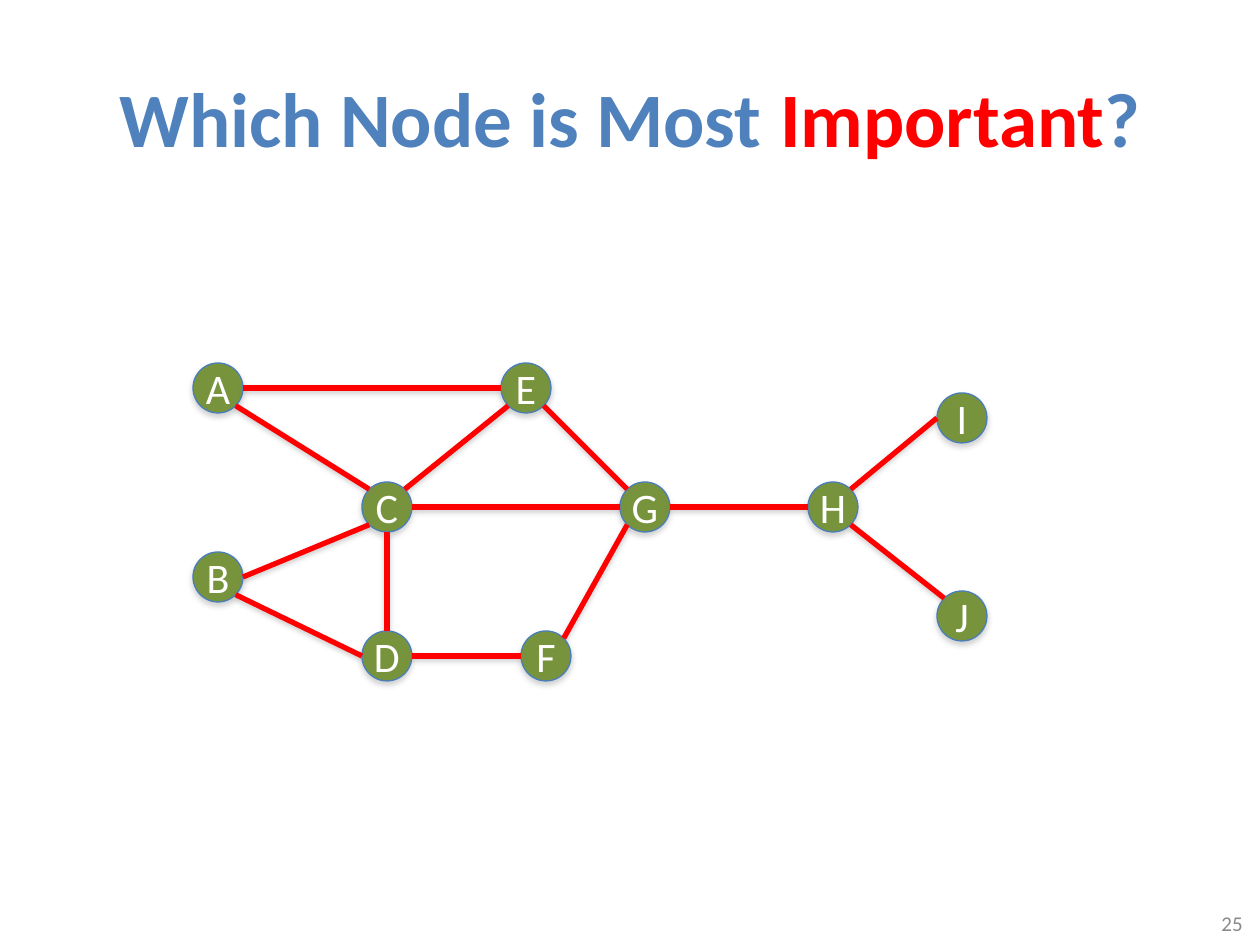
from lxml import etree
from pptx import Presentation
from pptx.dml.color import RGBColor
from pptx.enum.shapes import MSO_CONNECTOR, MSO_SHAPE
from pptx.enum.text import MSO_ANCHOR, PP_ALIGN
from pptx.oxml.ns import qn
from pptx.util import Emu, Pt

LINE, OVAL = MSO_CONNECTOR.STRAIGHT, MSO_SHAPE.OVAL
MIDDLE = MSO_ANCHOR.MIDDLE
CENTER, RIGHT = PP_ALIGN.CENTER, PP_ALIGN.RIGHT
TITLE_ONLY = 5
SCALE = 914400 / 126
FONT = "Calibri"
RED, BLUE, WHITE = "FF0000", "4F81BD", "FFFFFF"
RADIUS = 25
DIAGONAL = 0.71
SITES = {
    "n": (0, -1), "s": (0, 1), "e": (1, 0), "w": (-1, 0),
    "ne": (DIAGONAL, -DIAGONAL), "nw": (-DIAGONAL, -DIAGONAL),
    "se": (DIAGONAL, DIAGONAL), "sw": (-DIAGONAL, DIAGONAL),
}
NODES = {
    "A": (25, 25), "B": (25, 214), "D": (194, 293), "C": (194, 144),
    "E": (333, 25), "F": (353, 293), "G": (452, 144), "H": (640, 144),
    "I": (769, 55), "J": (769, 253),
}
EDGES = [
    ("C", "e", "G", "w"), ("C", "ne", "E", "sw"), ("C", "nw", "A", "se"),
    ("C", "sw", "B", "e"), ("D", "w", "B", "se"), ("D", "n", "C", "s"),
    ("D", "e", "F", "w"), ("F", "ne", "G", "sw"), ("G", "nw", "E", "se"),
    ("A", "e", "E", "w"), ("G", "e", "H", "w"), ("H", "ne", "I", "w"),
    ("H", "se", "J", "nw"),
]


def px(length):
    """Turn pixels into EMU."""
    return Emu(round(length * SCALE))


def color(value):
    """Turn a hex string into a colour."""
    return RGBColor.from_string(value)


def add_span(para, text, size, hue, bold=False):
    """Add one formatted run to a paragraph."""
    span = para.add_run()
    span.text = text
    span.font.name, span.font.size, span.font.bold = FONT, Pt(size), bold
    span.font.color.rgb = color(hue)


def add_shadow(shape, opacity, distance):
    """Give a shape or connector a soft grey shadow straight below it."""
    effects = etree.SubElement(shape.element.spPr, qn("a:effectLst"))
    shadow = etree.SubElement(
        effects, qn("a:outerShdw"), blurRad=str(Pt(3.1)), dist=str(Pt(distance)),
        dir="5400000", rotWithShape="0")
    tint = etree.SubElement(shadow, qn("a:srgbClr"), val="808080")
    etree.SubElement(tint, qn("a:alpha"), val=str(opacity * 1000))


def add_title(page, left, top, width, height):
    """Place and fill the title placeholder."""
    title = page.shapes.title
    title.left, title.top, title.width, title.height = map(px, (left, top, width, height))
    title.text_frame.vertical_anchor = MIDDLE
    para = title.text_frame.paragraphs[0]
    para.alignment = CENTER
    for text, hue in (("Which Node is Most ", BLUE), ("Important", RED), ("?", BLUE)):
        add_span(para, text, 44, hue, True)


def add_page_number(page, left, top, width, height):
    """Write the page number in the corner."""
    frame = page.shapes.add_textbox(*map(px, (left, top, width, height))).text_frame
    frame.word_wrap = True
    frame.vertical_anchor = MIDDLE
    para = frame.paragraphs[0]
    para.alignment = RIGHT
    add_span(para, "25", 12, "898989")


def add_node(page, name, x, y):
    """Draw a labelled round node centred on a point."""
    node = page.shapes.add_shape(
        OVAL, px(x - RADIUS), px(y - RADIUS), px(2 * RADIUS), px(2 * RADIUS))
    node.fill.solid()
    node.fill.fore_color.rgb = color("77933C")
    node.line.color.rgb = color("4A7EBB")
    node.line.width = Pt(0.75)
    add_shadow(node, 35, 1.8)
    frame = node.text_frame
    frame.margin_left = frame.margin_right = frame.margin_top = frame.margin_bottom = 0
    frame.vertical_anchor = MIDDLE
    frame.word_wrap = True
    para = frame.paragraphs[0]
    para.alignment = CENTER
    add_span(para, name, 24, WHITE)


def add_edge(page, start, end):
    """Draw a red edge between two points."""
    edge = page.shapes.add_connector(LINE, *map(px, start + end))
    edge.line.color.rgb = color(RED)
    edge.line.width = Pt(3)
    add_shadow(edge, 38, 1.6)


def add_graph(page, left, top):
    """Draw the nodes and the edges that join their rims."""
    centers = {name: (left + x, top + y) for name, (x, y) in NODES.items()}

    def rim(name, site):
        """Find the point of a node's rim in a compass direction."""
        return tuple(c + RADIUS * d for c, d in zip(centers[name], SITES[site]))

    for name, (x, y) in centers.items():
        add_node(page, name, x, y)
    for first, first_site, second, second_site in EDGES:
        add_edge(page, rim(first, first_site), rim(second, second_site))


def main():
    """Build the deck and save it."""
    deck = Presentation()
    deck.slide_width, deck.slide_height = px(1260), px(945)
    page = deck.slides.add_slide(deck.slide_layouts[TITLE_ONLY])
    add_title(page, 63, 38, 1134, 158)
    add_page_number(page, 961, 898, 294, 50)
    add_graph(page, 193, 363)
    deck.save("out.pptx")


if __name__ == "__main__":
    main()
